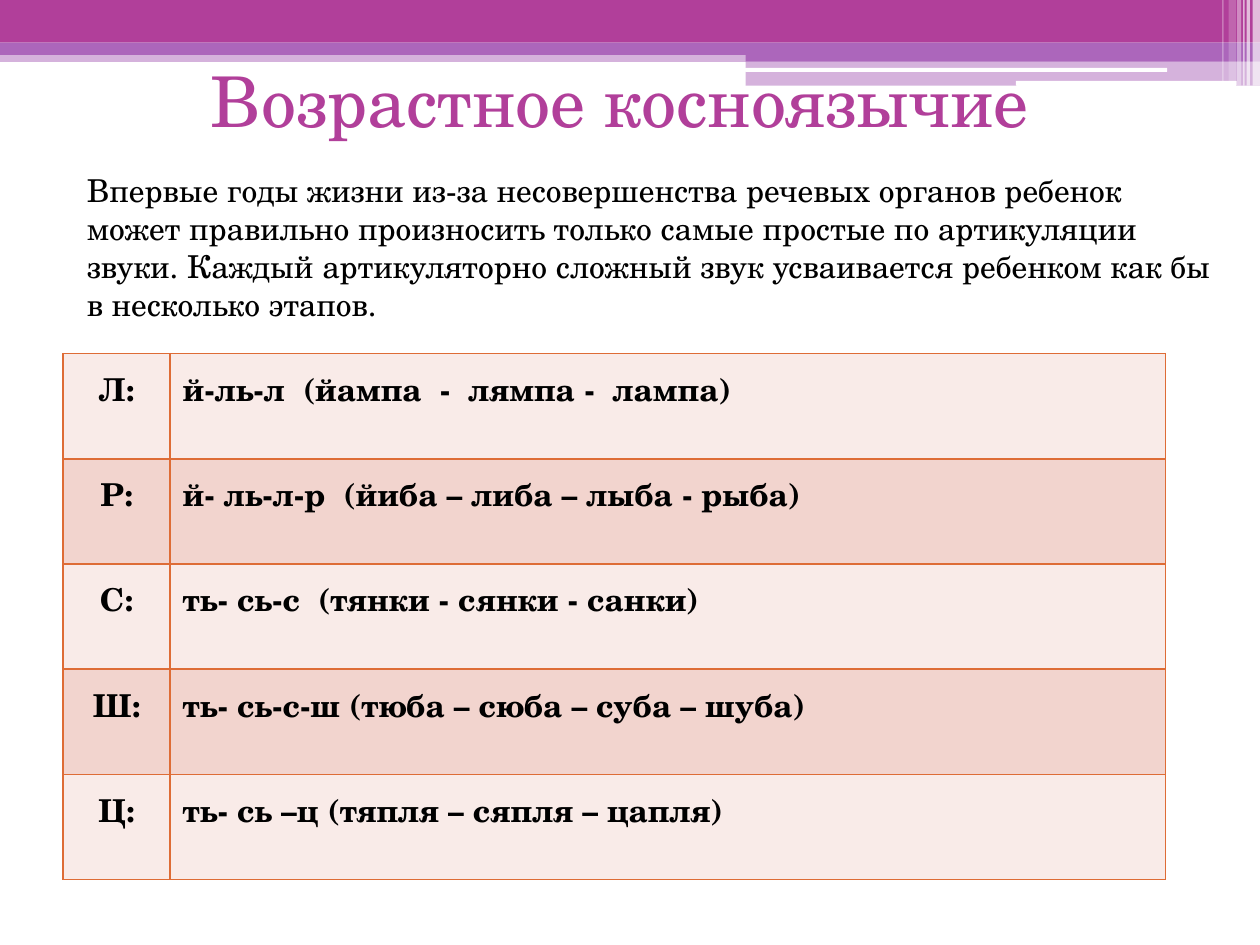
from lxml import etree
from pptx import Presentation
from pptx.dml.color import RGBColor
from pptx.enum import shapes, text
from pptx.oxml.ns import qn
from pptx.util import Cm, Pt

FONT = "TeX Gyre Schola"
MAGENTA, PURPLE, WHITE, BLACK = "B13F9A", "AC66BB", "FFFFFF", "000000"
BORDER = "DE6C36"
ROW_FILLS = ("F9EBE8", "F2D4CE")

TITLE = "Возрастное косноязычие "
INTRO = (
    "Впервые годы жизни из-за несовершенства речевых органов ребенок может "
    "правильно произносить только самые простые по артикуляции звуки. Каждый "
    "артикуляторно сложный звук усваивается ребенком как бы в несколько этапов."
)
SOUNDS = [
    ("Л:", "й-ль-л  (йампа  -  лямпа -  лампа)"),
    ("Р:", "й- ль-л-р  (йиба – либа – лыба - рыба)"),
    ("С:", "ть- сь-с  (тянки - сянки - санки)"),
    ("Ш:", "ть- сь-с-ш (тюба – сюба – суба – шуба)"),
    ("Ц:", "ть- сь –ц (тяпля – сяпля – цапля)"),
]

# Header bands: left, top, width, height (cm), colour, opacity in %
BANDS = [
    (0, 1.02, 25.4, 0.23, PURPLE, 50),
    (0, 0, 25.4, 0.86, MAGENTA, 100),
    (0, 0.86, 25.4, 0.25, PURPLE, 100),
    (15.03, 0.99, 10.37, 0.25, PURPLE, 100),
    (15.03, 1.24, 10.37, 0.49, PURPLE, 50),
]
# White rounded rules: left, top, width, height
RULES = [(15.02, 1.37, 8.51, 0.08), (20.48, 1.63, 4.45, 0.1)]
# White stripes at the right end: left, width, height, opacity in %
STRIPES = [
    (25.25, 0.15, 1.73, 65),
    (25.13, 0.07, 1.73, 65),
    (25.06, 0.03, 1.73, 60),
    (24.94, 0.08, 1.73, 40),
    (24.77, 0.15, 1.63, 20),
    (24.64, 0.03, 1.63, 30),
]


def rgb(colour):
    return RGBColor.from_string(colour)


def add_block(slide, box, colour, opacity=100, kind=shapes.MSO_SHAPE.RECTANGLE):
    block = slide.shapes.add_shape(kind, *map(Cm, box))
    block.shadow.inherit = False
    block.line.fill.background()
    block.fill.solid()
    block.fill.fore_color.rgb = rgb(colour)
    if opacity < 100:
        tint = block.fill._xPr.find(qn("a:solidFill"))[0]
        etree.SubElement(tint, qn("a:alpha"), val=str(opacity * 1000))


def write(frame, words, size, colour, bold=False, align=text.PP_ALIGN.LEFT):
    frame.text = words
    frame.word_wrap = True
    line = frame.paragraphs[0]
    line.alignment = align
    for run in line.runs:
        run.font.name = FONT
        run.font.size = Pt(size)
        run.font.bold = bold
        run.font.color.rgb = rgb(colour)


def set_borders(cell, colour, width):
    props = cell._tc.get_or_add_tcPr()
    for place, side in enumerate(("a:lnL", "a:lnR", "a:lnT", "a:lnB")):
        edge = etree.Element(qn(side), w=str(Pt(width)))
        fill = etree.SubElement(edge, qn("a:solidFill"))
        etree.SubElement(fill, qn("a:srgbClr"), val=colour)
        props.insert(place, edge)


def main():
    deck = Presentation()
    deck.slide_width, deck.slide_height = Cm(25.4), Cm(19.05)
    slide = deck.slides.add_slide(deck.slide_layouts[6])

    # Header decoration
    for *box, colour, opacity in BANDS:
        add_block(slide, box, colour, opacity)
    for box in RULES:
        add_block(slide, box, WHITE, kind=shapes.MSO_SHAPE.ROUNDED_RECTANGLE)
    for left, width, height, opacity in STRIPES:
        add_block(slide, (left, 0, width, height), WHITE, opacity)

    # Title
    title = slide.shapes.add_textbox(Cm(1.27), Cm(0.91), Cm(22.86), Cm(2.21))
    title.text_frame.vertical_anchor = text.MSO_ANCHOR.MIDDLE
    write(title.text_frame, TITLE, 40, MAGENTA, align=text.PP_ALIGN.CENTER)

    # Sounds and the stages of learning them
    columns, row_height = (2.16, 20.07), 2.12
    sounds = slide.shapes.add_table(
        len(SOUNDS), len(columns), Cm(1.27), Cm(7.13),
        Cm(sum(columns)), Cm(row_height * len(SOUNDS))).table
    for column, width in zip(sounds.columns, columns):
        column.width = Cm(width)
    aligns = (text.PP_ALIGN.CENTER, text.PP_ALIGN.LEFT)
    for r, stages in enumerate(SOUNDS):
        for c, words in enumerate(stages):
            cell = sounds.cell(r, c)
            cell.margin_top = Cm(0.22)
            cell.fill.solid()
            cell.fill.fore_color.rgb = rgb(ROW_FILLS[r % 2])
            write(cell.text_frame, words, 18, BLACK, True, aligns[c])
            set_borders(cell, BORDER, 1)

    # Introduction
    intro = slide.shapes.add_textbox(Cm(1.5), Cm(3.33), Cm(23.19), Cm(3.33))
    write(intro.text_frame, INTRO, 18, BLACK)

    deck.save("out.pptx")


if __name__ == "__main__":
    main()
